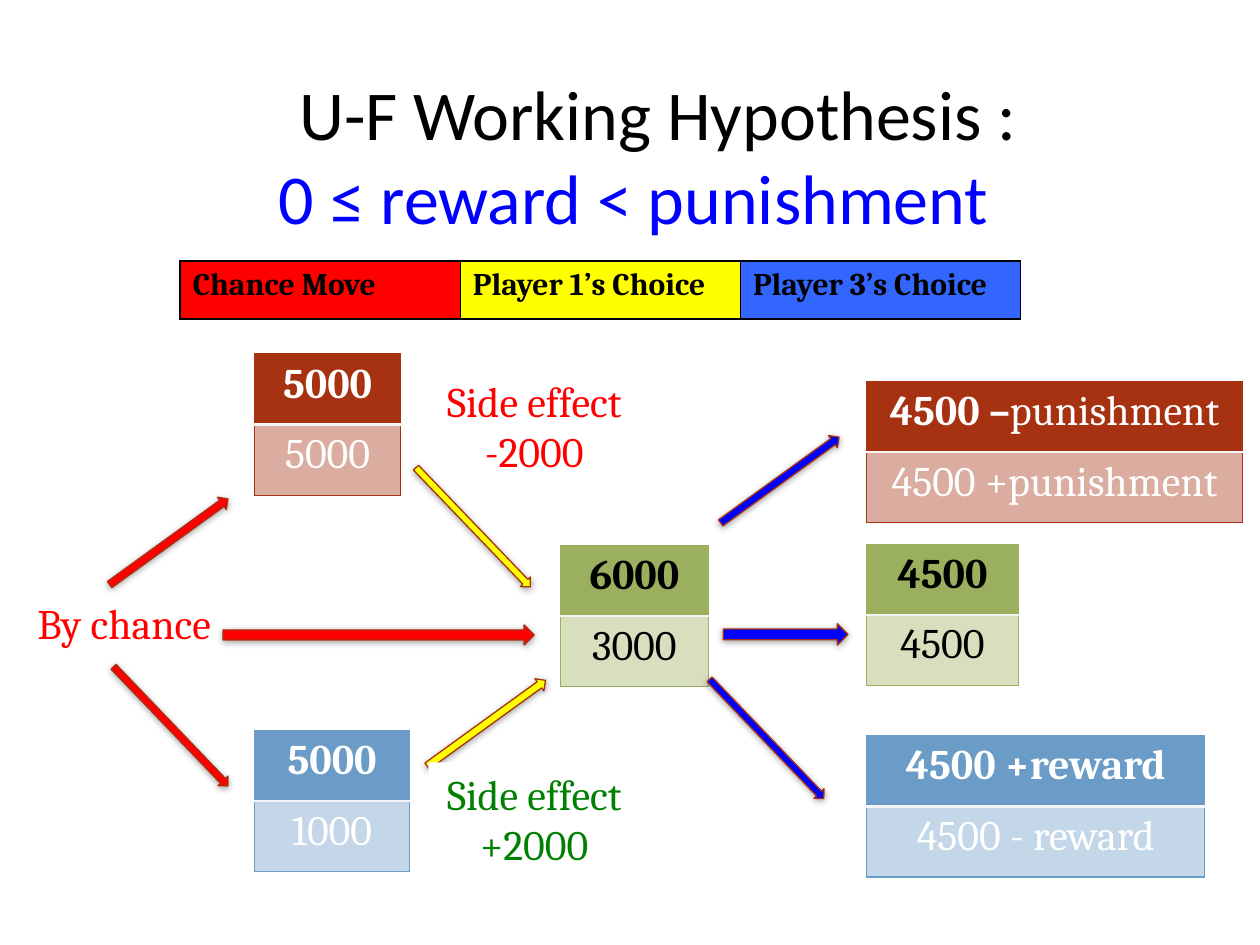
from dataclasses import dataclass
from typing import Optional

from lxml.etree import SubElement
from pptx import Presentation
from pptx.dml.color import RGBColor
from pptx.enum.shapes import MSO_SHAPE as Shape
from pptx.enum.text import MSO_ANCHOR as Anchor, MSO_AUTO_SIZE as AutoSize, PP_ALIGN as Align
from pptx.oxml import parse_xml
from pptx.oxml.ns import nsdecls, qn
from pptx.util import Inches, Pt

COLORS = {
    "black": "000000", "white": "FFFFFF", "divider": "F4F4F4",
    "red": "FF0000", "yellow": "FFFF00", "blue": "0000FF", "green": "008000",
    "brick": "A63212", "olive": "9BB05E", "sky": "6B9BC7", "royal": "3366FF",
}
ROW_H = 0.56
FLAT, UP, DOWN = 0, 324.1, 46.2


@dataclass
class Payoff:
    left: float
    top: float
    width: float
    color: str
    text_color: str
    first: str
    second: str
    first_plain: str = ""


@dataclass
class Arrow:
    left: float
    top: float
    width: float
    height: float
    angle: float
    color: str


@dataclass
class Note:
    left: float
    top: float
    width: float
    height: float
    lines: list[str]
    color: str
    fill: Optional[str] = None


PAYOFFS = [
    Payoff(4.45, 4.33, 1.17, "olive", "black", "6000", "3000"),
    Payoff(6.88, 4.32, 1.2, "olive", "black", "4500", "4500"),
    Payoff(2.02, 2.81, 1.16, "brick", "white", "5000", "5000"),
    Payoff(2.02, 5.8, 1.23, "sky", "white", "5000", "1000"),
    Payoff(6.88, 3.03, 2.98, "brick", "white", "4500 –", "4500 +punishment", "punishment"),
    Payoff(6.88, 5.84, 2.68, "sky", "white", "4500 +reward", "4500 - reward"),
]
ARROWS = [
    Arrow(0.76, 4.24, 1.16, 0.12, UP, "red"),
    Arrow(1.77, 4.96, 2.47, 0.16, FLAT, "red"),
    Arrow(0.7, 5.71, 1.31, 0.11, DOWN, "red"),
    Arrow(3.1, 4.13, 1.31, 0.11, DOWN, "yellow"),
    Arrow(3.28, 5.68, 1.16, 0.12, UP, "yellow"),
    Arrow(5.61, 3.75, 1.16, 0.12, UP, "blue"),
    Arrow(5.74, 4.95, 0.99, 0.17, FLAT, "blue"),
    Arrow(5.43, 5.81, 1.31, 0.11, DOWN, "blue"),
]
NOTES = [
    Note(0.16, 4.69, 1.65, 0.5, ["By chance"], "red"),
    Note(3.4, 2.93, 1.68, 0.91, ["Side effect", "-2000"], "red"),
    Note(3.4, 6.05, 1.68, 0.91, ["Side effect", "+2000"], "green", "white"),
]
LEGEND = [("Chance Move", "red"), ("Player 1’s Choice", "yellow"), ("Player 3’s Choice", "royal")]


def rgb(name: str) -> RGBColor:
    return RGBColor.from_string(COLORS[name])


def style(p, size: float, color: str, bold: bool = False, font: str = "Cambria") -> None:
    p.font.name, p.font.size, p.font.bold = font, Pt(size), bold
    p.font.color.rgb = rgb(color)


def paint_cell(cell, fill: str, borders: dict, alpha: Optional[int] = None) -> None:
    """Fill a cell; borders maps L, R, T, B to (color, points)."""
    cell.fill.solid()
    cell.fill.fore_color.rgb = rgb(fill)
    tc_pr = cell._tc.get_or_add_tcPr()
    if alpha:
        SubElement(tc_pr.find(".//" + qn("a:srgbClr")), qn("a:alpha"), val=str(alpha * 1000))
    for i, side in enumerate("LRTB"):
        color, width = borders[side]
        tc_pr.insert(i, parse_xml(
            f'<a:ln{side} {nsdecls("a")} w="{Pt(width)}"><a:solidFill>'
            f'<a:srgbClr val="{COLORS[color]}"/></a:solidFill></a:ln{side}>'))


def add_table(s, rows: int, cols: int, left: float, top: float, width: float, height: float):
    return s.shapes.add_table(rows, cols, Inches(left), Inches(top),
                              Inches(width), Inches(height)).table


def add_payoff(s, item: Payoff) -> None:
    table = add_table(s, 2, 1, item.left, item.top, item.width, 2 * ROW_H)
    edges = dict.fromkeys("LRTB", (item.color, 0.75))
    divider = ("divider", 1.5)
    top, bottom = table.cell(0, 0), table.cell(1, 0)
    paint_cell(top, item.color, {**edges, "B": divider})
    paint_cell(bottom, item.color, {**edges, "T": divider}, alpha=40)
    for cell, text, bold in ((top, item.first, True), (bottom, item.second, False)):
        p = cell.text_frame.paragraphs[0]
        p.alignment = Align.CENTER
        p.add_run().text = text
        style(p, 24, item.text_color, bold)
        for r in p.runs:
            r.font.bold = bold
    if item.first_plain:
        r = top.text_frame.paragraphs[0].add_run()
        r.text, r.font.bold = item.first_plain, False
    for p in (top.text_frame.paragraphs[0], bottom.text_frame.paragraphs[0]):
        for r in p.runs:
            r.font.name, r.font.size = "Cambria", Pt(24)
            r.font.color.rgb = rgb(item.text_color)


def add_legend(s) -> None:
    table = add_table(s, 1, len(LEGEND), 1.43, 2.07, 6.67, 0.46)
    for i, (text, fill) in enumerate(LEGEND):
        cell = table.cell(0, i)
        paint_cell(cell, fill, dict.fromkeys("LRTB", ("black", 1)))
        cell.text = text
        p = cell.text_frame.paragraphs[0]
        style(p, 18, "black", bold=True)
        r = p.runs[0]
        r.font.name, r.font.size, r.font.bold = "Cambria", Pt(18), True
        r.font.color.rgb = rgb("black")


def add_arrow(s, item: Arrow) -> None:
    sp = s.shapes.add_shape(Shape.RIGHT_ARROW, Inches(item.left), Inches(item.top),
                            Inches(item.width), Inches(item.height))
    sp.rotation = item.angle
    sp.fill.solid()
    sp.fill.fore_color.rgb = rgb(item.color)
    sp.line.color.rgb = rgb("brick")
    sp.line.width = Pt(0.75)
    # Soft shadow below the arrow
    sp.shadow.inherit = False
    effects = sp._element.spPr.find(qn("a:effectLst"))
    effects.append(parse_xml(
        f'<a:outerShdw {nsdecls("a")} blurRad="{Pt(4)}" dist="{Pt(1)}" dir="5400000" '
        f'rotWithShape="0"><a:srgbClr val="{COLORS["black"]}"><a:alpha val="37000"/>'
        '</a:srgbClr></a:outerShdw>'))


def add_note(s, item: Note) -> None:
    sp = s.shapes.add_textbox(Inches(item.left), Inches(item.top),
                              Inches(item.width), Inches(item.height))
    if item.fill:
        sp.fill.solid()
        sp.fill.fore_color.rgb = rgb(item.fill)
    tf = sp.text_frame
    tf.word_wrap = False
    tf.auto_size = AutoSize.SHAPE_TO_FIT_TEXT
    tf.text = "\n".join(item.lines)
    for p in tf.paragraphs:
        p.alignment = Align.CENTER
        style(p, 24, item.color)


def add_title(s) -> None:
    title = s.shapes.title
    title.left, title.top, title.width, title.height = (Inches(v) for v in (0.47, 0.6, 9, 1.25))
    tf = title.text_frame
    tf.auto_size, tf.vertical_anchor = AutoSize.NONE, Anchor.MIDDLE
    tf.text = "U-F Working Hypothesis :\n0 ≤ reward < punishment"
    for p, color, indent in zip(tf.paragraphs, ("black", "blue"), (0.5, 0.12)):
        p.alignment = Align.CENTER
        p._p.get_or_add_pPr().set("marL", str(Inches(indent)))
        style(p, 40, color, font="Calibri")


def main() -> None:
    prs = Presentation()
    prs.slide_width, prs.slide_height = Inches(10), Inches(7.5)
    s = prs.slides.add_slide(prs.slide_layouts[5])
    add_title(s)
    add_legend(s)
    for payoff in PAYOFFS:
        add_payoff(s, payoff)
    for arrow in ARROWS:
        add_arrow(s, arrow)
    for note in NOTES:
        add_note(s, note)
    prs.save("out.pptx")


if __name__ == "__main__":
    main()
